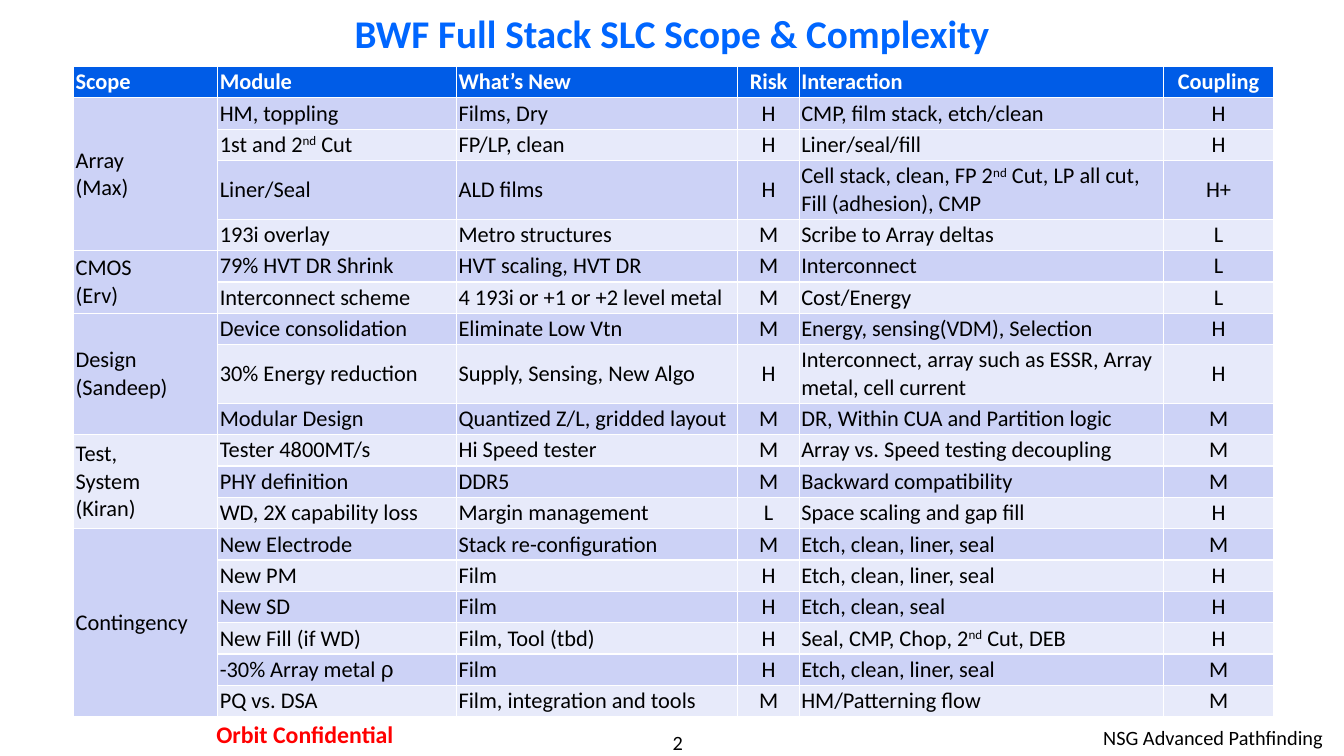
import pptx
import pptx.util
import pptx.dml.color
import pptx.enum.text

Pt = pptx.util.Pt
RGBColor = pptx.dml.color.RGBColor
ALIGN = pptx.enum.text.PP_ALIGN
MIDDLE = pptx.enum.text.MSO_ANCHOR.MIDDLE

BLACK = RGBColor(0x00, 0x00, 0x00)
WHITE = RGBColor(0xFF, 0xFF, 0xFF)
RED = RGBColor(0xFF, 0x00, 0x00)
AZURE = RGBColor(0x00, 0x66, 0xFF)
HEAD = RGBColor(0x00, 0x5C, 0xE7)
DARK = RGBColor(0xCC, 0xD2, 0xF6)
LIGHT = RGBColor(0xE7, 0xEA, 0xFA)

COLS = [("Scope", 103), ("Module", 170.6), ("What’s New", 200.9),
        ("Risk", 43.9), ("Interaction", 259.9), ("Coupling", 79.2)]
MID = {3, 5}  # centred columns
ROW, TALL = 22.4, 41.9
LONG = 40  # an interaction longer than this takes two lines

# A caret opens and closes a superscript.
SCOPES = [
    ("Array\n(Max)", [
        ("HM, toppling", "Films, Dry", "H", "CMP, film stack, etch/clean", "H"),
        ("1st and 2^nd^ Cut", "FP/LP, clean", "H", "Liner/seal/fill", "H"),
        ("Liner/Seal", "ALD films", "H",
         "Cell stack, clean, FP 2^nd^ Cut, LP all cut, Fill (adhesion), CMP", "H+"),
        ("193i overlay", "Metro structures", "M", "Scribe to Array deltas", "L")]),
    ("CMOS\n(Erv)", [
        ("79% HVT DR Shrink", "HVT scaling, HVT DR", "M", "Interconnect", "L"),
        ("Interconnect scheme", "4 193i or +1 or +2 level metal", "M",
         "Cost/Energy", "L")]),
    ("Design\n(Sandeep)", [
        ("Device consolidation", "Eliminate Low Vtn", "M",
         "Energy, sensing(VDM), Selection", "H"),
        ("30% Energy reduction", "Supply, Sensing, New Algo", "H",
         "Interconnect, array such as ESSR, Array metal, cell current", "H"),
        ("Modular Design", "Quantized Z/L, gridded layout", "M",
         "DR, Within CUA and Partition logic", "M")]),
    ("Test,\nSystem\n(Kiran)", [
        ("Tester 4800MT/s", "Hi Speed tester", "M",
         "Array vs. Speed testing decoupling", "M"),
        ("PHY definition", "DDR5", "M", "Backward compatibility", "M"),
        ("WD, 2X capability loss", "Margin management", "L",
         "Space scaling and gap fill", "H")]),
    ("Contingency", [
        ("New Electrode", "Stack re-configuration", "M",
         "Etch, clean, liner, seal", "M"),
        ("New PM", "Film", "H", "Etch, clean, liner, seal", "H"),
        ("New SD", "Film", "H", "Etch, clean, seal", "H"),
        ("New Fill (if WD)", "Film, Tool (tbd)", "H",
         "Seal, CMP, Chop, 2^nd^ Cut, DEB", "H"),
        ("-30% Array metal ρ", "Film", "H", "Etch, clean, liner, seal", "M"),
        ("PQ vs. DSA", "Film, integration and tools", "M",
         "HM/Patterning flow", "M")]),
]


def style(para, size, color, bold=False, align=ALIGN.LEFT):
    para.alignment = align
    font = para.font
    font.name, font.size, font.bold = "Calibri", Pt(size), bold
    font.color.rgb = color


def add_runs(para, text):
    """Write text, raising what stands between carets; rho is in Arial."""
    for i, part in enumerate(text.split("^")):
        stem = part.removesuffix("ρ")
        run = para.add_run()
        run.text = stem
        if i % 2:
            run.font._element.set("baseline", "30000")
        if stem != part:
            rho = para.add_run()
            rho.text = "ρ"
            rho.font.name = "Arial"


def fill_cell(cell, text, fill, color, bold, align):
    cell.margin_left = cell.margin_right = Pt(1.44)
    cell.margin_top = cell.margin_bottom = Pt(1.44)
    cell.vertical_anchor = MIDDLE
    cell.fill.solid()
    cell.fill.fore_color.rgb = fill
    frame = cell.text_frame
    for i, line in enumerate(text.split("\n")):
        para = frame.add_paragraph() if i else frame.paragraphs[0]
        style(para, 16, color, bold, align)
        add_runs(para, line)


def add_title(slide, left, top, width, height):
    title = slide.shapes.title
    title.left, title.top = Pt(left), Pt(top)
    title.width, title.height = Pt(width), Pt(height)
    frame = title.text_frame
    frame.text = "BWF Full Stack SLC Scope & Complexity"
    frame.vertical_anchor = MIDDLE
    style(frame.paragraphs[0], 28, AZURE, True, ALIGN.CENTER)


def add_grid(slide, left, top):
    rows = [(name if i == 0 else "",) + row
            for name, group in SCOPES for i, row in enumerate(group)]
    highs = [ROW] + [TALL if len(row[4]) > LONG else ROW for row in rows]
    wides = [wide for _, wide in COLS]
    grid = slide.shapes.add_table(len(highs), len(COLS), Pt(left), Pt(top),
                                  Pt(sum(wides)), Pt(sum(highs))).table
    for col, wide in zip(grid.columns, wides):
        col.width = Pt(wide)
    for row, high in zip(grid.rows, highs):
        row.height = Pt(high)

    heads = tuple(name for name, _ in COLS)
    for r, row in enumerate([heads] + rows):
        fill = HEAD if r == 0 else DARK if r % 2 else LIGHT
        color = BLACK if r else WHITE
        for c, text in enumerate(row):
            align = ALIGN.CENTER if c in MID else ALIGN.LEFT
            fill_cell(grid.cell(r, c), text, fill, color, r == 0, align)

    first = 1
    for _, group in SCOPES:
        last = first + len(group) - 1
        grid.cell(first, 0).merge(grid.cell(last, 0))
        first = last + 1


def add_note(slide, box, text, size, color, bold, align, pad):
    """Add a line of footer text with (side, top) padding."""
    frame = slide.shapes.add_textbox(*map(Pt, box)).text_frame
    frame.word_wrap = True
    frame.margin_left = frame.margin_right = Pt(pad[0])
    frame.margin_top = frame.margin_bottom = Pt(pad[1])
    para = frame.paragraphs[0]
    style(para, size, color, bold, align)
    para.add_run().text = text


def add_foot(slide, top):
    add_note(slide, (400.3, top + 6.5, 167.8, 17.3), "2",
             14.5, BLACK, False, ALIGN.CENTER, (0, 0))
    add_note(slide, (635.8, top, 316.1, 25.2), "NSG Advanced Pathfinding",
             14.5, BLACK, False, ALIGN.RIGHT, (7.2, 3.6))
    add_note(slide, (111.6, top - 5, 212.4, 29.5), "Orbit Confidential",
             17, RED, True, ALIGN.CENTER, (8.64, 4.32))


def main():
    deck = pptx.Presentation()
    deck.slide_width, deck.slide_height = Pt(960), Pt(540)
    slide = deck.slides.add_slide(deck.slide_layouts[5])
    add_foot(slide, 514.8)
    add_title(slide, 72, 12.2, 815.8, 23)
    add_grid(slide, 52.6, 47.5)
    deck.save("out.pptx")


if __name__ == "__main__":
    main()
